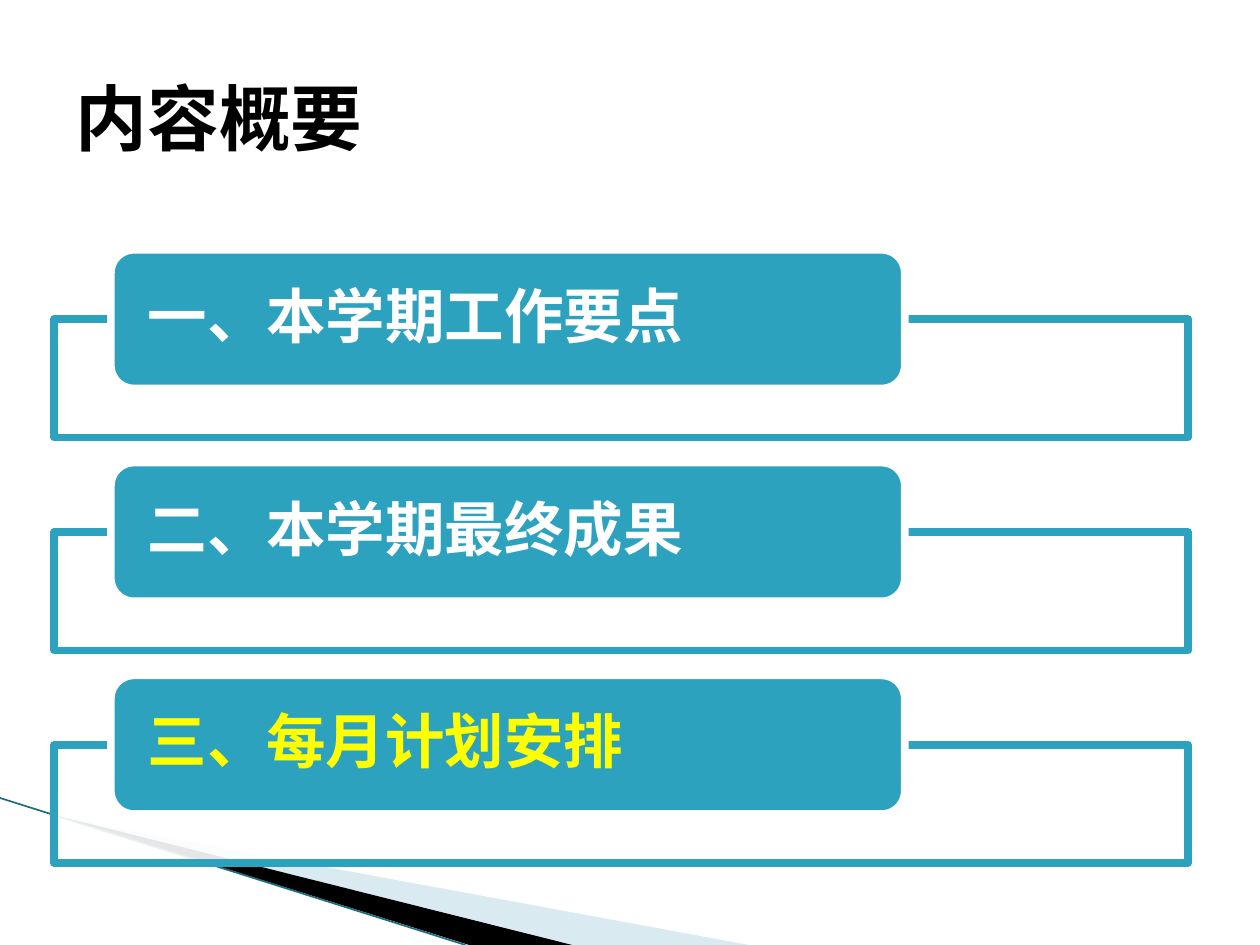
from lxml.etree import SubElement
from pptx import Presentation
from pptx.dml.color import RGBColor
from pptx.enum.shapes import MSO_CONNECTOR as Connector, MSO_SHAPE as Shape
from pptx.enum.text import MSO_ANCHOR as Anchor, PP_ALIGN as Align
from pptx.oxml.ns import qn
from pptx.util import Pt

COLORS = {
    "teal": "2DA2BF",
    "dark teal": "1C6C80",
    "pale blue": "A0CBDC",
    "white": "FFFFFF",
    "black": "000000",
    "yellow": "FFFF00",
}


class AgendaSlide:
    font_name = "Noto Sans Mono"
    border = 4.33

    def __init__(self, slide):
        self.slide = slide
        self.shapes = slide.shapes

    def color(self, name):
        return RGBColor.from_string(COLORS[name])

    def fill(self, shape, color, opacity=100):
        shape.shadow.inherit = False
        shape.fill.solid()
        shape.fill.fore_color.rgb = self.color(color)
        if opacity < 100:
            element = shape._element.spPr.find(
                qn("a:solidFill") + "/" + qn("a:srgbClr"))
            SubElement(element, qn("a:alpha"), val=str(opacity * 1000))

    def outline(self, shape, color, width):
        shape.line.color.rgb = self.color(color)
        shape.line.width = Pt(width)

    def set_text(self, shape, text, size, color):
        frame = shape.text_frame
        frame.text = text
        frame.word_wrap = True
        frame.vertical_anchor = Anchor.MIDDLE
        paragraph = frame.paragraphs[0]
        paragraph.alignment = Align.LEFT
        for run in paragraph.runs:
            run.font.name = self.font_name
            run.font.size = Pt(size)
            run.font.bold = True
            run.font.color.rgb = self.color(color)
            properties = run._r.get_or_add_rPr()
            SubElement(properties, qn("a:ea"), typeface=self.font_name)
        return frame

    def title(self, text, left, top, width, height):
        shape = self.shapes.title
        shape.left, shape.top = Pt(left), Pt(top)
        shape.width, shape.height = Pt(width), Pt(height)
        self.set_text(shape, text, 41, "black")

    def wedge(self, points, color, opacity=100):
        start, *others = [(Pt(x), Pt(y)) for x, y in points]
        builder = self.shapes.build_freeform(*start)
        builder.add_line_segments(others, close=True)
        shape = builder.convert_to_shape()
        self.fill(shape, color, opacity)
        shape.line.fill.background()

    def line(self, start, end, color, width):
        ends = [Pt(value) for value in (*start, *end)]
        connector = self.shapes.add_connector(Connector.STRAIGHT, *ends)
        self.outline(connector, color, width)
        SubElement(connector._element.spPr, qn("a:effectLst"))

    def box(self, kind, left, top, width, height, color, border, opacity=100):
        shape = self.shapes.add_shape(
            kind, Pt(left), Pt(top), Pt(width), Pt(height))
        self.fill(shape, color, opacity)
        self.outline(shape, border, self.border)
        return shape

    def agenda_item(self, text, top, color):
        self.box(Shape.RECTANGLE, 31, top + 39.6, 648, 67.7, "white", "teal", 90)
        bar = self.box(Shape.ROUNDED_RECTANGLE, 63.4, top, 453.6, 79.2,
                       "teal", "white")
        frame = self.set_text(bar, text, 34, color)
        frame.margin_left = frame.margin_right = Pt(17.15)
        frame.margin_top = frame.margin_bottom = 0
        frame.paragraphs[0].line_spacing = 0.9


def main():
    presentation = Presentation()
    presentation.slide_width, presentation.slide_height = Pt(720), Pt(540)
    slide = presentation.slides.add_slide(presentation.slide_layouts[5])
    agenda = AgendaSlide(slide)

    # Corner decoration
    agenda.wedge([(39.6, 468.5), (428, 540), (328, 540), (39.6, 468)],
                 "pale blue", 40)
    agenda.wedge([(38, 467.5), (327, 540), (268, 540), (38.5, 468)], "black")
    agenda.line((0, 456), (266, 540), "dark teal", 0.95)

    # Agenda items, the current one in yellow
    items = [
        ("一、本学期工作要点", "white"),
        ("二、本学期最终成果", "white"),
        ("三、每月计划安排", "yellow"),
    ]
    for index, (text, color) in enumerate(items):
        agenda.agenda_item(text, 142.8 + index * 121.6, color)

    # Title
    agenda.title("内容概要", 36, 21.6, 648, 90)

    presentation.save("out.pptx")


if __name__ == "__main__":
    main()
